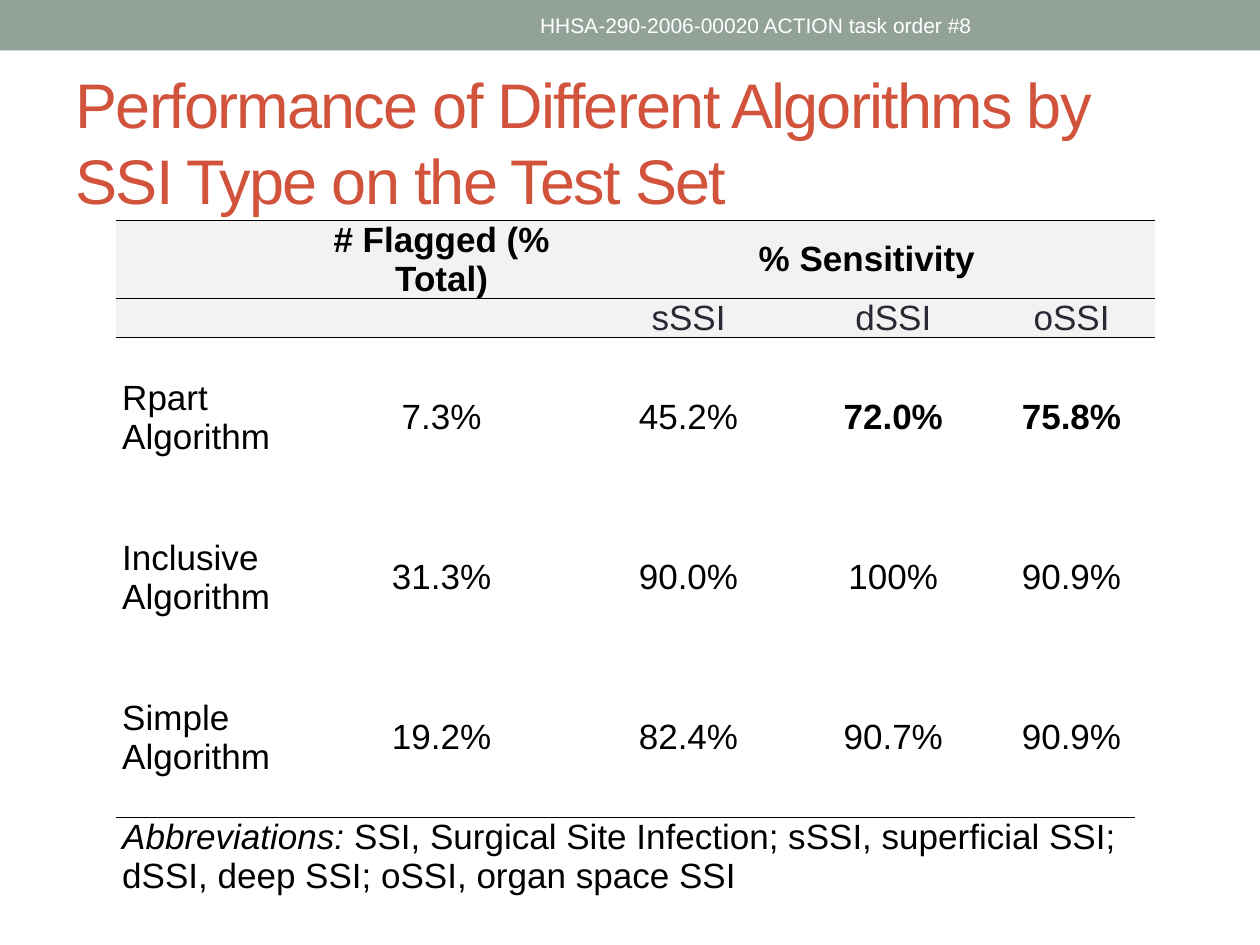
from lxml.etree import SubElement
from pptx import Presentation
from pptx.dml.color import RGBColor
from pptx.enum.shapes import MSO_SHAPE as Shape
from pptx.enum.text import MSO_ANCHOR as Anchor, MSO_AUTO_SIZE as AutoSize, PP_ALIGN as Align
from pptx.oxml.ns import qn
from pptx.util import Inches, Pt

BLACK, DARK, GRAY = "000000", "292934", "F2F2F2"
COLUMN_WIDTHS = [1.5, 2.17, 1.75, 1.5, 1.17, 0.16]
ROW_HEIGHTS = [0.62, 0.31, 1.27, 1.27, 1.27, 0.62]
ROWS = [
    ["", "# Flagged (% Total)", "% Sensitivity"],
    ["", "", "sSSI", "dSSI", "oSSI"],
    ["Rpart Algorithm", "7.3%", "45.2%", "72.0%", "75.8%"],
    ["Inclusive Algorithm", "31.3%", "90.0%", "100%", "90.9%"],
    ["Simple Algorithm", "19.2%", "82.4%", "90.7%", "90.9%"],
]
ABBREVIATIONS = [
    "Abbreviations:",
    " SSI, Surgical Site Infection; sSSI, superficial SSI; dSSI, deep SSI; oSSI, organ space SSI",
]
BOLD_CELLS = {(0, 1), (0, 2), (2, 3), (2, 4)}
RULED_EDGES = {0, 1, 2, 5}


def color(value):
    """Turn a hex string into a colour."""
    return RGBColor.from_string(value)


def format_run(run, size, value, bold=False, italic=False):
    """Set the font of a run."""
    font = run.font
    font.name, font.size, font.bold, font.italic = "Arial", Pt(size), bold, italic
    font.color.rgb = color(value)


def add_band(slide):
    """Add the coloured band across the top."""
    band = slide.shapes.add_shape(Shape.RECTANGLE, 0, 0, Inches(10), Inches(0.4))
    band.shadow.inherit = False
    band.fill.solid()
    band.fill.fore_color.rgb = color("93A299")
    band.line.fill.background()


def set_title(slide, text):
    """Place and format the title."""
    title = slide.shapes.title
    title.left, title.top = Inches(0.5), Inches(0.58)
    title.width, title.height = Inches(9), Inches(1.08)
    frame = title.text_frame
    frame.text = text
    frame.word_wrap, frame.auto_size = True, AutoSize.NONE
    frame.vertical_anchor = Anchor.MIDDLE
    paragraph = frame.paragraphs[0]
    paragraph.alignment = Align.LEFT
    format_run(paragraph.runs[0], 36, "D2533C")
    paragraph.runs[0]._r.get_or_add_rPr().set("spc", "-100")


def add_task_order(slide, text):
    """Add the task order label on the band."""
    box = slide.shapes.add_textbox(Inches(3.75), Inches(0.02), Inches(4.5), Inches(0.36))
    frame = box.text_frame
    frame.text = text
    frame.word_wrap, frame.vertical_anchor = True, Anchor.MIDDLE
    paragraph = frame.paragraphs[0]
    paragraph.alignment = Align.CENTER
    format_run(paragraph.runs[0], 12, "FFFFFF")


def set_borders(cell, top, bottom):
    """Rule the top and bottom of a cell as asked and clear its sides."""
    properties = cell._tc.get_or_add_tcPr()
    for tag, ruled in (("lnL", False), ("lnR", False), ("lnT", top), ("lnB", bottom)):
        line = SubElement(properties, qn(f"a:{tag}"), w=str(Pt(1)))
        if ruled:
            fill = SubElement(line, qn("a:solidFill"))
            SubElement(fill, qn("a:srgbClr"), val=BLACK)
        else:
            SubElement(line, qn("a:noFill"))


def format_cell(cell, row, column):
    """Set the margins, borders and fill of a cell."""
    cell.margin_left = cell.margin_right = Inches(0.05)
    cell.margin_top = cell.margin_bottom = 0
    cell.vertical_anchor = Anchor.MIDDLE
    top, bottom = (
        edge in RULED_EDGES and not (edge == 5 and column == 5) for edge in (row, row + 1)
    )
    set_borders(cell, top, bottom)
    if row < 2:
        cell.fill.solid()
        cell.fill.fore_color.rgb = color(GRAY)
    else:
        cell.fill.background()


def fill_cell(cell, row, column, text):
    """Write and format the text of a cell."""
    cell.text = text
    paragraph = cell.text_frame.paragraphs[0]
    paragraph.alignment = Align.CENTER if column else Align.LEFT
    for run in paragraph.runs:
        format_run(run, 20, DARK if row == 1 else BLACK, bold=(row, column) in BOLD_CELLS)


def fill_abbreviations(cell):
    """Write the abbreviations with an italic lead."""
    paragraph = cell.text_frame.paragraphs[0]
    for index, text in enumerate(ABBREVIATIONS):
        run = paragraph.add_run()
        run.text = text
        format_run(run, 20, BLACK, italic=index == 0)


def add_results_table(slide):
    """Add the table of algorithm results."""
    frame = slide.shapes.add_table(
        len(ROW_HEIGHTS), len(COLUMN_WIDTHS), Inches(0.92), Inches(1.75),
        Inches(sum(COLUMN_WIDTHS)), Inches(sum(ROW_HEIGHTS)),
    )
    table = frame.table
    table.first_row = table.horz_banding = False
    for column, width in zip(table.columns, COLUMN_WIDTHS):
        column.width = Inches(width)
    for row, height in zip(table.rows, ROW_HEIGHTS):
        row.height = Inches(height)
    for row in range(len(ROW_HEIGHTS)):
        for column in range(len(COLUMN_WIDTHS)):
            format_cell(table.cell(row, column), row, column)
    for row, texts in enumerate(ROWS):
        table.cell(row, len(texts) - 1).merge(table.cell(row, 5))
        for column, text in enumerate(texts):
            fill_cell(table.cell(row, column), row, column, text)
    table.cell(5, 0).merge(table.cell(5, 4))
    fill_abbreviations(table.cell(5, 0))


def main():
    """Build and save the slide."""
    presentation = Presentation()
    presentation.slide_width, presentation.slide_height = Inches(10), Inches(7.5)
    slide = presentation.slides.add_slide(presentation.slide_layouts[5])
    add_band(slide)
    set_title(slide, "Performance of Different Algorithms by SSI Type on the Test Set")
    add_results_table(slide)
    add_task_order(slide, "HHSA-290-2006-00020 ACTION task order #8")
    presentation.save("out.pptx")


if __name__ == "__main__":
    main()
